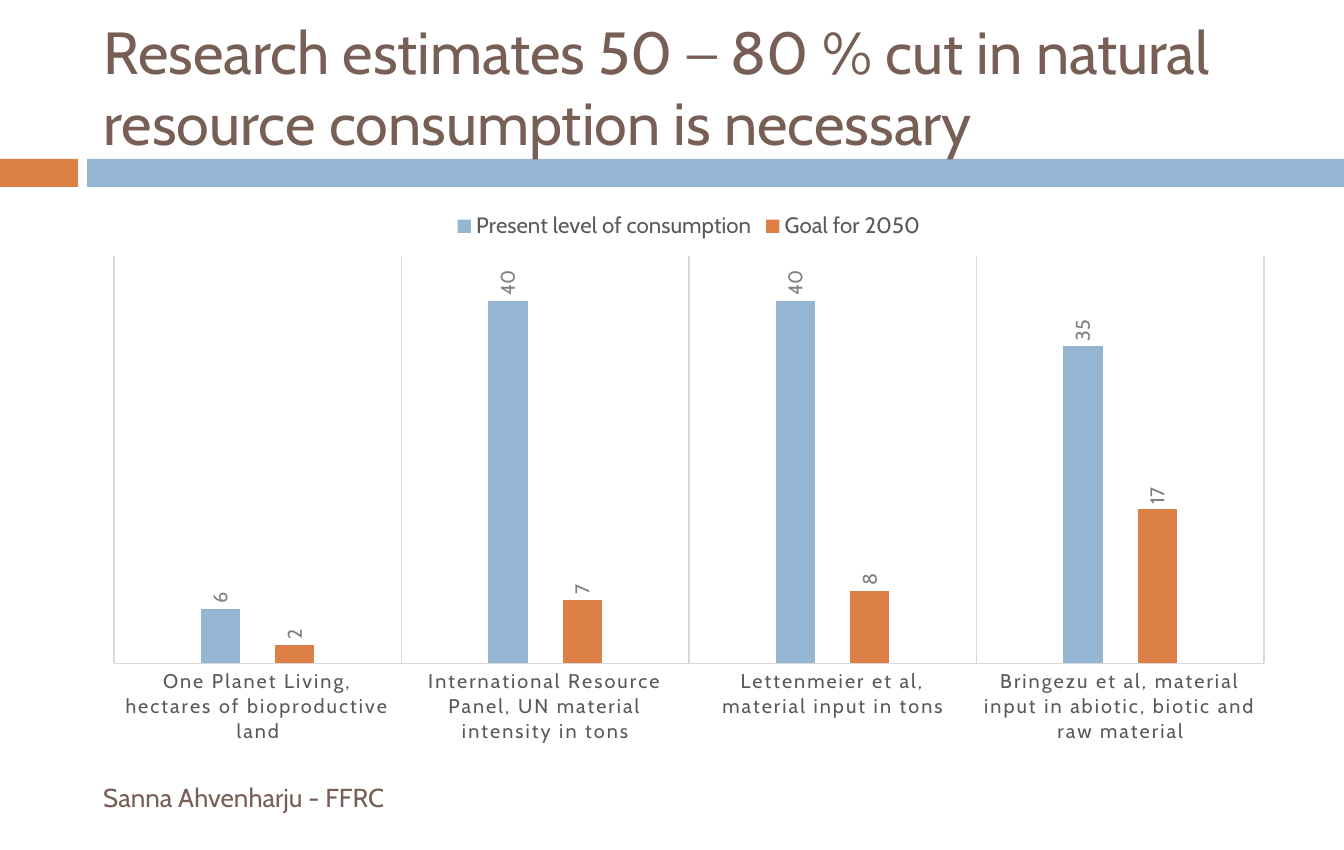
from pptx import Presentation
from pptx import util as u
from pptx.chart.data import CategoryChartData
from pptx.dml.color import RGBColor
from pptx.enum import chart as ch
from pptx.enum import shapes, text
from pptx.oxml.ns import qn

SCALE = 6844
FONT = "Cabin"
HUES = {
    "blue": "94B6D2",
    "orange": "DD8047",
    "brown": "775F55",
    "label": "808080",
    "axis": "595959",
    "grid": "D9D9D9",
}
CATS = [
    "One Planet Living, hectares of bioproductive land",
    "International Resource Panel, UN material intensity in tons",
    "Lettenmeier et al, material input in tons",
    "Bringezu et al, material input in abiotic, biotic and raw material",
]
SERIES = [
    ("Present level of consumption", (6, 40, 40, 35), "blue"),
    ("Goal for 2050", (2, 7, 8, 17), "orange"),
]


def px(*nums):
    return [u.Emu(n * SCALE) for n in nums]


def rgb(hue):
    return RGBColor.from_string(HUES[hue])


def style(font, size, hue, name=FONT):
    font.size = u.Pt(size)
    font.name = name
    font.bold = False
    font.color.rgb = rgb(hue)
    font._element.set("kern", "1200")


def write(shape, runs, size):
    frame = shape.text_frame
    frame.word_wrap = True
    frame.auto_size = text.MSO_AUTO_SIZE.NONE
    frame.vertical_anchor = text.MSO_ANCHOR.MIDDLE
    para = frame.paragraphs[0]
    para.alignment = text.PP_ALIGN.LEFT
    for words, name in runs:
        run = para.add_run()
        run.text = words
        style(run.font, size, "brown", name)


def add_title(slide, box, runs):
    title = slide.shapes.title
    title.left, title.top, title.width, title.height = px(*box)
    write(title, runs, 32)


def add_bar(slide, box, hue):
    bar = slide.shapes.add_shape(shapes.MSO_SHAPE.RECTANGLE, *px(*box))
    bar.shadow.inherit = False
    bar.fill.solid()
    bar.fill.fore_color.rgb = rgb(hue)
    bar.line.fill.background()
    slide.shapes._spTree.insert(2, bar._element)


def add_note(slide, box, words):
    write(slide.shapes.add_textbox(*px(*box)), [(words, FONT)], 14)


def set_line(line):
    line.color.rgb = rgb("grid")
    line.width = u.Pt(0.75)


def set_axes(chart):
    cat = chart.category_axis
    cat.major_tick_mark = ch.XL_TICK_MARK.NONE
    cat.has_major_gridlines = True
    set_line(cat.major_gridlines.format.line)
    set_line(cat.format.line)
    font = cat.tick_labels.font
    style(font, 10.64, "axis")
    font._element.set("spc", "120")
    val = chart.value_axis
    val.minimum_scale, val.maximum_scale = 0, 45
    val.has_major_gridlines = False
    val.visible = False


def set_legend(chart):
    chart.has_legend = True
    legend = chart.legend
    legend.position = ch.XL_LEGEND_POSITION.TOP
    legend.include_in_layout = False
    style(legend.font, 11.97, "axis")


def set_series(series, hue):
    series.format.fill.solid()
    series.format.fill.fore_color.rgb = rgb(hue)
    series.invert_if_negative = False
    labels = series.data_labels
    labels.show_value = True
    labels.position = ch.XL_LABEL_POSITION.OUTSIDE_END
    style(labels.font, 10.64, "label")
    turn = labels._element.find(qn("c:txPr")).find(qn("a:bodyPr"))
    turn.set("rot", "-5400000")
    turn.set("vert", "horz")


def add_chart(slide, box):
    data = CategoryChartData()
    data.categories = CATS
    for name, vals, hue in SERIES:
        data.add_series(name, vals)
    kind = ch.XL_CHART_TYPE.COLUMN_CLUSTERED
    chart = slide.shapes.add_chart(kind, *px(*box), data).chart
    chart.has_title = False
    chart.font.name = FONT
    chart.font.size = u.Pt(10)
    plot = chart.plots[0]
    plot.vary_by_categories = False
    plot.gap_width, plot.overlap = 444, -90
    for series, (name, vals, hue) in zip(plot.series, SERIES):
        set_series(series, hue)
    set_axes(chart)
    set_legend(chart)


def main():
    prs = Presentation()
    prs.slide_width, prs.slide_height = px(1344, 850)
    slide = prs.slides.add_slide(prs.slide_layouts[5])
    add_bar(slide, (0, 159, 78, 28), "orange")
    add_bar(slide, (87, 159, 1257, 28), "blue")
    add_title(slide, (90, 25, 1198, 123), [
        ("Research estimates 50 ", FONT),
        ("─ ", "Calibri"),
        ("80 % cut in natural resource consumption is necessary", FONT),
    ])
    add_note(slide, (90, 775, 796, 45), "Sanna Ahvenharju - FFRC")
    add_chart(slide, (90, 198, 1198, 557))
    prs.save("out.pptx")


if __name__ == "__main__":
    main()
